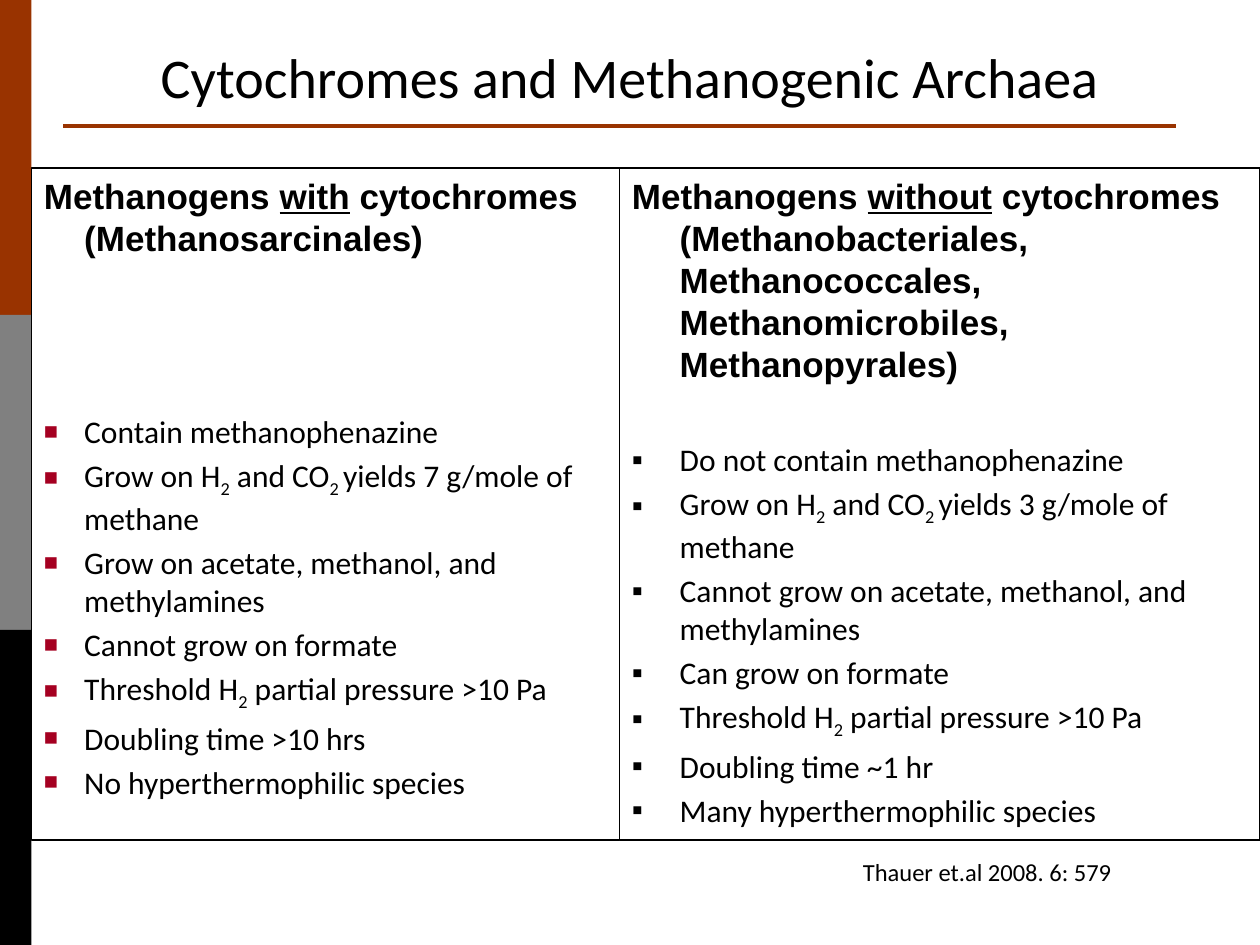
from dataclasses import dataclass
from itertools import cycle
from typing import Optional

from lxml.etree import SubElement as Sub
from pptx import Presentation
from pptx.dml.color import RGBColor as Rgb
from pptx.enum.shapes import MSO_CONNECTOR as Link, MSO_SHAPE as Kind
from pptx.enum.text import MSO_ANCHOR as Anchor, PP_ALIGN as Align
from pptx.oxml.ns import qn
from pptx.util import Inches, Pt

COLS, ROWS = 120, 90
RUST, GRAY, BLACK, RED = "993300", "808080", "000000", "A50021"

deck = Presentation()
deck.slide_width, deck.slide_height = Inches(10), Inches(7.5)
slide = deck.slides.add_slide(deck.slide_layouts[6])
shapes = slide.shapes


@dataclass
class Box:
    col: float
    row: float
    wide: float
    high: float

    def place(self) -> tuple[int, int, int, int]:
        x, y = deck.slide_width / COLS, deck.slide_height / ROWS
        return (round(self.col * x), round(self.row * y),
                round(self.wide * x), round(self.high * y))


@dataclass
class Mark:
    char: str
    tint: str
    size: int


@dataclass
class Panel:
    box: Box
    head: str
    items: list[str]
    mark: Mark
    dent: float
    gap: float


def paint(hue: str) -> Rgb:
    return Rgb.from_string(hue)


def block(box: Box, fill: Optional[str] = None, line: Optional[str] = None):
    shape = shapes.add_shape(Kind.RECTANGLE, *box.place())
    shape.shadow.inherit = False
    if fill:
        shape.fill.solid()
        shape.fill.fore_color.rgb = paint(fill)
    else:
        shape.fill.background()
    if line:
        shape.line.color.rgb = paint(line)
        shape.line.width = Pt(0.75)
    else:
        shape.line.fill.background()
    return shape


def rule(box: Box, hue: str, width: float) -> None:
    x, y, wide, high = box.place()
    line = shapes.add_connector(Link.STRAIGHT, x, y, x + wide, y + high)
    line.line.color.rgb = paint(hue)
    line.line.width = Pt(width)
    Sub(line._element.spPr, qn("a:effectLst"))


def write(para, text: str, *, font: str = "Calibri", size: float = 18,
          bold: bool = False, align=Align.LEFT, before: float = 0,
          dent: float = 0, mark: Optional[Mark] = None) -> None:
    para.alignment = align
    para.space_before = Pt(before)
    props = para._p.get_or_add_pPr()
    if dent:
        props.set("marL", str(Inches(dent)))
        props.set("indent", str(-Inches(dent)))
    if mark:
        Sub(Sub(props, qn("a:buClr")), qn("a:srgbClr"), val=mark.tint)
        Sub(props, qn("a:buSzPct"), val=str(mark.size * 1000))
        Sub(props, qn("a:buFont"), typeface="Arial")
        Sub(props, qn("a:buChar"), char=mark.char)
    for part, lower in zip(text.split("_"), cycle((False, True))):
        for piece, under in zip(part.split("*"), cycle((False, True))):
            run = para.add_run()
            run.text = piece
            face = run.font
            face.name, face.size, face.bold = font, Pt(size), bold
            face.color.rgb = paint(BLACK)
            if under:
                face.underline = True
            if lower:
                run._r.get_or_add_rPr().set("baseline", "-25000")


def label(box: Box, text: str, anchor=Anchor.TOP, **style) -> None:
    frame = shapes.add_textbox(*box.place()).text_frame
    frame.word_wrap = True
    frame.vertical_anchor = anchor
    write(frame.paragraphs[0], text, **style)


def draw(panel: Panel) -> None:
    frame = block(panel.box, line=BLACK).text_frame
    frame.word_wrap = True
    frame.vertical_anchor = Anchor.TOP
    write(frame.paragraphs[0], panel.head, font="Arial", size=20,
          bold=True, dent=panel.dent)
    for i, item in enumerate(panel.items):
        write(frame.add_paragraph(), item, dent=panel.dent, mark=panel.mark,
              before=3.6 if i else panel.gap)


PANELS = [
    Panel(Box(3, 16, 56, 64),
          "Methanogens *with* cytochromes (Methanosarcinales)",
          ["Contain methanophenazine",
           "Grow on H_2_ and CO_2 _yields 7 g/mole of methane",
           "Grow on acetate, methanol, and methylamines",
           "Cannot grow on formate",
           "Threshold H_2_ partial pressure >10 Pa",
           "Doubling time >10 hrs",
           "No hyperthermophilic species"],
          Mark("■", RED, 75), 0.32, 88),
    Panel(Box(59, 16, 61, 64),
          "Methanogens *without* cytochromes (Methanobacteriales, "
          "Methanococcales, Methanomicrobiles, Methanopyrales)",
          ["Do not contain methanophenazine",
           "Grow on H_2_ and CO_2 _yields 3 g/mole of methane",
           "Cannot grow on acetate, methanol, and methylamines",
           "Can grow on formate",
           "Threshold H_2_ partial pressure >10 Pa",
           "Doubling time ~1 hr",
           "Many hyperthermophilic species"],
          Mark("▪", BLACK, 100), 0.38, 32),
]

for i, hue in enumerate((RUST, GRAY, BLACK)):
    block(Box(0, i * ROWS / 3, 3, ROWS / 3), fill=hue)
rule(Box(6, 12, 106, 0), RUST, 2.25)
label(Box(6, 0, 108, 11), "Cytochromes and Methanogenic Archaea",
      Anchor.BOTTOM, size=32, align=Align.CENTER)
for panel in PANELS:
    draw(panel)
label(Box(81, 81, 35, 4), "Thauer et.al 2008. 6: 579", size=14)

deck.save("out.pptx")
